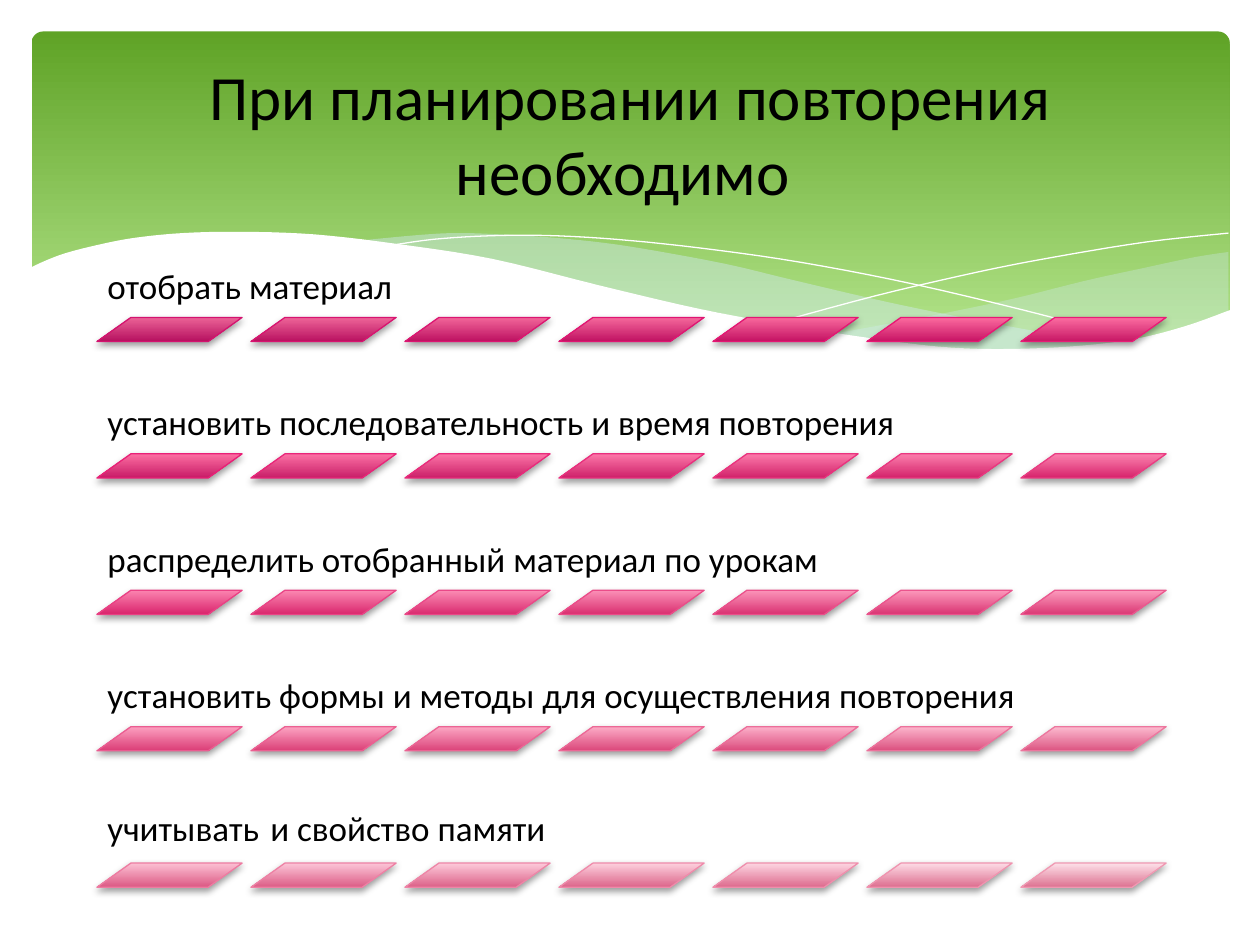
from dataclasses import dataclass

from lxml.etree import SubElement
from pptx import Presentation
from pptx.dml.color import RGBColor
from pptx.enum.shapes import MSO_SHAPE
from pptx.enum.text import MSO_ANCHOR, PP_ALIGN
from pptx.oxml.ns import qn
from pptx.util import Pt


@dataclass(frozen=True)
class Theme:
    font: str = "Calibri"
    title_size: float = 36
    item_size: float = 20
    gap_size: float = 28
    text: str = "000000"
    paper: str = "FFFFFF"
    mist: str = "D6ECFF"
    header: tuple = ("5FA326", "B2E389")
    # Bar number: gradient top, gradient bottom, outline
    bar_stops: tuple = (
        (0, ("EB6397", "B6105F", "D4136F")),
        (5, ("FC6B9F", "C71364", "E81774")),
        (8, ("FC71A4", "C81F68", "E92579")),
        (14, ("FB84B0", "DA256D", "EA4084")),
        (24, ("FCABC6", "DB487B", "EC6896")),
        (34, ("FDE1E9", "DD7291", "F098B2")),
    )

    def bar_colors(self, n):
        for (a, start), (b, end) in zip(self.bar_stops, self.bar_stops[1:]):
            if n <= b:
                return [blend(c, d, (n - a) / (b - a)) for c, d in zip(start, end)]


def blend(c, d, t):
    pairs = zip(bytes.fromhex(c), bytes.fromhex(d))
    return "".join(f"{round(u + (v - u) * t):02X}" for u, v in pairs)


def smooth(points, steps=5):
    """Catmull-Rom curve through the points."""
    padded = [points[0], *points, points[-1]]
    curve = [points[0]]
    for quad in zip(padded, padded[1:], padded[2:], padded[3:]):
        for i in range(1, steps + 1):
            t = i / steps
            curve.append(tuple(
                (2 * b + (c - a) * t + (2 * a - 5 * b + 4 * c - d) * t ** 2
                 + (3 * b - a - 3 * c + d) * t ** 3) / 2
                for a, b, c, d in zip(*quad)))
    return curve


class Deck:
    def __init__(self, theme):
        self.theme = theme
        self.prs = Presentation()
        self.prs.slide_width, self.prs.slide_height = Pt(720), Pt(540)
        self.s = self.prs.slides.add_slide(self.prs.slide_layouts[6])

    def gradient(self, sp, colors, end=1.0):
        sp.fill.gradient()
        sp.fill.gradient_angle = 270
        for stop, color, position in zip(sp.fill.gradient_stops, colors, (0, end)):
            stop.color.rgb = RGBColor.from_string(color)
            stop.position = position

    def outline(self, sp, color=None, width=0):
        if color:
            sp.line.color.rgb = RGBColor.from_string(color)
            sp.line.width = Pt(width)
        else:
            sp.line.fill.background()

    def shape(self, kind, box, adjust, colors, end=1.0, line=None):
        sp = self.s.shapes.add_shape(kind, *map(Pt, box))
        sp.shadow.inherit = False
        sp.adjustments[0] = adjust
        self.gradient(sp, colors, end)
        self.outline(sp, line, 0.75)
        return sp

    def drop_shadow(self, sp):
        effects = sp._element.spPr.find(qn("a:effectLst"))
        shadow = SubElement(effects, qn("a:outerShdw"), blurRad=str(Pt(4)),
                            dist=str(Pt(2)), dir="5400000", rotWithShape="0")
        color = SubElement(shadow, qn("a:srgbClr"), val=self.theme.text)
        SubElement(color, qn("a:alpha"), val="38000")

    def curve(self, points, fill=None, opacity=100, line=None):
        units = [(round(x * 100), round(y * 100)) for x, y in points]
        builder = self.s.shapes.build_freeform(*units[0], scale=Pt(1) / 100)
        builder.add_line_segments(units[1:], close=fill is not None)
        sp = builder.convert_to_shape()
        sp.shadow.inherit = False
        self.outline(sp, line)
        if fill is None:
            sp.fill.background()
            return
        sp.fill.solid()
        sp.fill.fore_color.rgb = RGBColor.from_string(fill)
        if opacity < 100:
            color = sp._element.spPr.find(qn("a:solidFill"))[0]
            SubElement(color, qn("a:alpha"), val=str(opacity * 1000))

    def text(self, box, runs, frame, paragraph):
        tf = self.s.shapes.add_textbox(*map(Pt, box)).text_frame
        p = tf.paragraphs[0]
        for target, formats in ((tf, {"word_wrap": True, **frame}), (p, paragraph)):
            for name, value in formats.items():
                setattr(target, name, value)
        for words, size in runs:
            r = p.add_run()
            r.text = words
            for name, value in {"name": self.theme.font, "size": Pt(size)}.items():
                setattr(r.font, name, value)
            r.font.color.rgb = RGBColor.from_string(self.theme.text)


# Key points of the header waves
RIGHT_TOP = [(702, 144), (682.6, 147), (652, 153.5), (620, 160.5), (580, 170.5),
             (542, 178.5), (508, 185), (476, 190.8)]
RIGHT_BOTTOM = [(476, 190.8), (507.5, 195), (536.5, 198), (562, 199.5), (586, 200),
                (614.5, 199), (640.5, 196.5), (663, 191), (683, 185), (702, 178)]
MIDDLE_TOP = [(643, 196.5), (602.5, 191), (558, 183), (508, 172.8), (453, 160),
              (420, 152), (389.5, 146), (352, 139.7), (318, 136), (287, 134),
              (260, 133.2), (236, 134.6), (206, 137.5)]
MIDDLE_BOTTOM = [(206, 137.5), (246, 143.3), (291, 152), (323, 160), (381.5, 173),
                 (433, 183.5), (468, 190), (500.5, 194.5), (530, 198),
                 (556.5, 199.5), (581, 200.2), (610.5, 199.5), (643, 196.5)]
FALLING_LINE = [(222.5, 140.4), (247.7, 136.8), (279, 134.8), (312, 134.6),
                (352, 136.8), (400.5, 141.8), (458, 150), (523.5, 162.7),
                (598.5, 180.7), (653, 196)]
RISING_LINE = [(441.5, 185), (500.5, 169), (558.5, 155.5), (602, 147),
               (655, 138.3), (702, 133.2)]
PAPER_EDGE = [(703.5, 177), (677, 186.5), (647, 194), (612, 198), (571, 199.5),
              (535.5, 198), (495.5, 193), (450.5, 186), (399.5, 176.5), (342, 163),
              (281.5, 148), (227.5, 139.5), (180, 134), (139, 132.5), (105, 133.2),
              (76.5, 136), (54.5, 140.3), (37.5, 144.7), (26, 149), (16.6, 153.4)]

ITEMS = ["отобрать материал",
         "установить последовательность и время повторения",
         "распределить отобранный материал по урокам",
         "установить формы и методы для осуществления повторения"]
BARS = 7


def main():
    theme = Theme()
    deck = Deck(theme)

    # Header with waves
    deck.shape(MSO_SHAPE.ROUNDED_RECTANGLE, (18, 18, 684.7, 194.4), 0.034,
               theme.header, end=0.9)
    deck.curve(smooth(RIGHT_TOP) + smooth(RIGHT_BOTTOM), theme.mist, 29)
    deck.curve(smooth(MIDDLE_TOP) + smooth(MIDDLE_BOTTOM), theme.mist, 40)
    for points in (FALLING_LINE, RISING_LINE):
        deck.curve(smooth(points), line=theme.paper)
    deck.curve(smooth(PAPER_EDGE) + [(16.6, 237), (703.5, 237)], theme.paper)

    # Title
    deck.text((36, 26.6, 648, 98.6),
              [("При планировании повторения необходимо ", theme.title_size)],
              {"vertical_anchor": MSO_ANCHOR.MIDDLE}, {"alignment": PP_ALIGN.CENTER})

    # Items, each above a row of bars
    rows = [[(item, theme.item_size)] for item in ITEMS]
    rows.append([("учитывать", theme.item_size), (" ", theme.gap_size),
                 ("и свойство памяти", theme.item_size)])
    margins = ("margin_left", "margin_top", "margin_right", "margin_bottom")
    frame = {"vertical_anchor": MSO_ANCHOR.BOTTOM, **dict.fromkeys(margins, Pt(6))}
    left, height = 55.4, 56.7
    for i, runs in enumerate(rows):
        y = 181.4 + 77.95 * i
        deck.text((left, y - height, 622.8, height), runs, frame,
                  {"line_spacing": 0.9})
        for j in range(BARS):
            top, bottom, line = theme.bar_colors(i * BARS + j)
            bar = deck.shape(MSO_SHAPE.PARALLELOGRAM, (left + 88 * j, y, 83, 13.8),
                             1.408, (top, bottom), line=line)
            deck.drop_shadow(bar)

    deck.prs.save("out.pptx")


if __name__ == "__main__":
    main()
